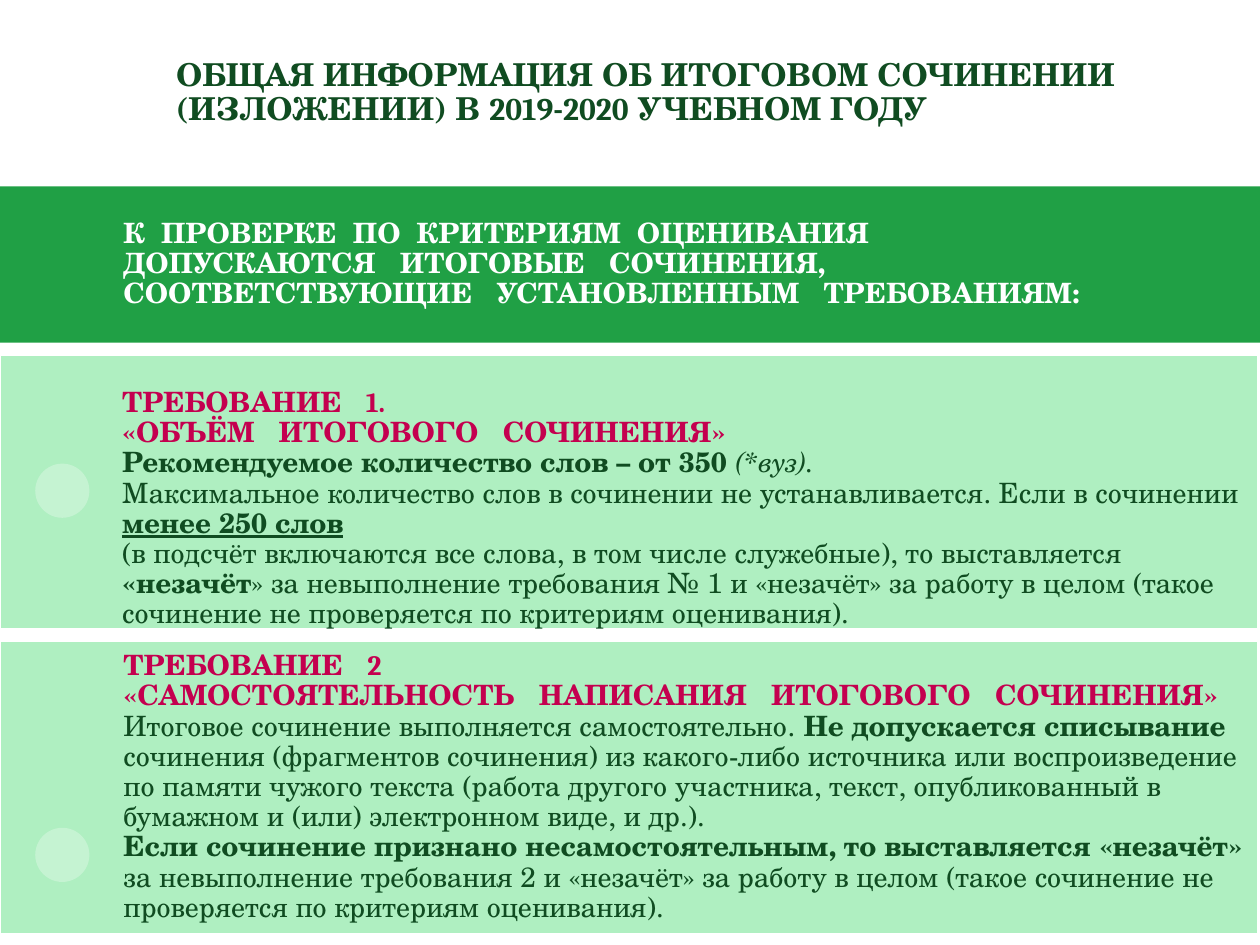
"""Build the slide on the final essay and its two requirements."""
from dataclasses import dataclass

from pptx import Presentation
from pptx.dml.color import RGBColor
from pptx.enum.shapes import MSO_SHAPE
from pptx.enum.text import MSO_ANCHOR, PP_ALIGN
from pptx.util import Inches, Pt

RECTANGLE = MSO_SHAPE.RECTANGLE
OVAL = MSO_SHAPE.OVAL
MIDDLE = MSO_ANCHOR.MIDDLE
LEFT = PP_ALIGN.LEFT

WHITE = RGBColor(0xFF, 0xFF, 0xFF)
DARK_GREEN = RGBColor(0x10, 0x4C, 0x21)
BAND_GREEN = RGBColor(0x20, 0xA0, 0x45)
PANEL_GREEN = RGBColor(0xAF, 0xEF, 0xC1)
DOT_GREEN = RGBColor(0xC5, 0xF3, 0xD2)
CRIMSON = RGBColor(0xC4, 0x00, 0x4F)

TEXT_FONT = "TeX Gyre Schola"
NUMBER_FONT = "Cambria"
DOT_SIZE = 0.43


@dataclass(frozen=True)
class Span:
    text: str
    color: RGBColor = DARK_GREEN
    bold: bool = False
    italic: bool = False
    underline: bool = False
    font: str = TEXT_FONT
    gap: float = 0


@dataclass(frozen=True)
class Panel:
    top: float
    height: float
    lines: list[list[Span]]
    fill: RGBColor = PANEL_GREEN
    left: float = -0.01
    indent: float = 0.98
    inset_top: float = 0.05
    inset_bottom: float = 0.05
    outlined: bool = True
    dot_top: float | None = None


def strong(text: str) -> Span:
    return Span(text, bold=True)


def spaced(text: str, color: RGBColor, gap: float = 9.2) -> Span:
    return Span(text, color, bold=True, gap=gap)


def requirement(number: str, name: str) -> list[list[Span]]:
    return [
        [spaced("ТРЕБОВАНИЕ ", CRIMSON),
         Span(number, CRIMSON, bold=True, font=NUMBER_FONT)],
        [spaced(name, CRIMSON)],
    ]


TITLE = [[
    strong("ОБЩАЯ ИНФОРМАЦИЯ ОБ ИТОГОВОМ СОЧИНЕНИИ (ИЗЛОЖЕНИИ) В "),
    Span("2019-2020", bold=True, font=NUMBER_FONT),
    strong(" УЧЕБНОМ ГОДУ"),
]]

PANELS = [
    Panel(1.48, 1.24, [
        [spaced("К ПРОВЕРКЕ ПО КРИТЕРИЯМ ОЦЕНИВАНИЯ", WHITE, gap=4.6)],
        [spaced("ДОПУСКАЮТСЯ ИТОГОВЫЕ СОЧИНЕНИЯ,", WHITE)],
        [spaced("СООТВЕТСТВУЮЩИЕ УСТАНОВЛЕННЫМ ТРЕБОВАНИЯМ:", WHITE)],
    ], fill=BAND_GREEN, left=0, outlined=False),
    Panel(2.81, 2.19, requirement("1.", "«ОБЪЁМ ИТОГОВОГО СОЧИНЕНИЯ»") + [
        [strong("Рекомендуемое количество слов – от 350 "),
         Span("(*вуз).", italic=True)],
        [Span("Максимальное количество слов в сочинении не устанавливается. "
              "Если в сочинении "),
         Span("менее 250 слов", bold=True, underline=True)],
        [Span("(в подсчёт включаются все слова, в том числе служебные), "
              "то выставляется "),
         strong("«незачёт"),
         Span("» за невыполнение требования № 1 и «незачёт» за работу в целом "
              "(такое сочинение не проверяется по критериям оценивания).")],
    ], inset_top=0.27, inset_bottom=0, dot_top=3.68),
    Panel(5.08, 2.34, requirement(
        "2", "«САМОСТОЯТЕЛЬНОСТЬ НАПИСАНИЯ ИТОГОВОГО СОЧИНЕНИЯ»") + [
        [Span("Итоговое сочинение выполняется самостоятельно. "),
         strong("Не допускается списывание"),
         Span(" сочинения (фрагментов сочинения) из какого-либо источника или "
              "воспроизведение по памяти чужого текста (работа другого "
              "участника, текст, опубликованный в бумажном и (или) "
              "электронном виде, и др.).")],
        [strong("Если сочинение признано несамостоятельным, "
                "то выставляется «незачёт» "),
         Span("за невыполнение требования 2 и «незачёт» за работу в целом "
              "(такое сочинение не проверяется по критериям оценивания).")],
    ], indent=0.99, dot_top=6.57),
]


def add_run(paragraph, text: str, span: Span, size: float):
    run = paragraph.add_run()
    run.text = text
    font = run.font
    font.name, font.size = span.font, Pt(size)
    font.bold, font.italic = span.bold, span.italic
    font.underline = span.underline
    font.color.rgb = span.color
    return run


def add_span(paragraph, span: Span, size: float) -> None:
    if not span.gap:
        add_run(paragraph, span.text, span, size)
        return
    for index, word in enumerate(span.text.split(" ")):
        if index:
            space = add_run(paragraph, " ", span, size)
            space.font._element.set("spc", str(round(span.gap * 100)))
        if word:
            add_run(paragraph, word, span, size)


def write_lines(frame, lines: list[list[Span]], size: float) -> None:
    frame.word_wrap = True
    frame.vertical_anchor = MIDDLE
    for index, spans in enumerate(lines):
        paragraph = frame.add_paragraph() if index else frame.paragraphs[0]
        paragraph.alignment = LEFT
        paragraph.line_spacing = 0.9
        for span in spans:
            add_span(paragraph, span, size)


def add_filled(slide, kind, left: float, top: float, width: float,
               height: float, fill: RGBColor):
    shape = slide.shapes.add_shape(
        kind, Inches(left), Inches(top), Inches(width), Inches(height))
    shape.shadow.inherit = False
    shape.fill.solid()
    shape.fill.fore_color.rgb = fill
    shape.line.fill.background()
    return shape


def add_panel(slide, panel: Panel) -> None:
    box = add_filled(slide, RECTANGLE, panel.left, panel.top, 10,
                     panel.height, panel.fill)
    if panel.outlined:
        box.line.color.rgb = WHITE
        box.line.width = Pt(2.25)
    frame = box.text_frame
    frame.margin_left = Inches(panel.indent)
    frame.margin_top = Inches(panel.inset_top)
    frame.margin_bottom = Inches(panel.inset_bottom)
    write_lines(frame, panel.lines, 16)


def main() -> None:
    presentation = Presentation()
    presentation.slide_width = Inches(10)
    presentation.slide_height = Inches(7.5)
    slide = presentation.slides.add_slide(presentation.slide_layouts[6])

    title = slide.shapes.add_textbox(
        Inches(1.3), Inches(0.31), Inches(8.4), Inches(0.86))
    write_lines(title.text_frame, TITLE, 18)

    for panel in PANELS:
        add_panel(slide, panel)
    for panel in PANELS:
        if panel.dot_top is not None:
            add_filled(slide, OVAL, 0.28, panel.dot_top, DOT_SIZE, DOT_SIZE,
                       DOT_GREEN)

    presentation.save("out.pptx")


if __name__ == "__main__":
    main()
